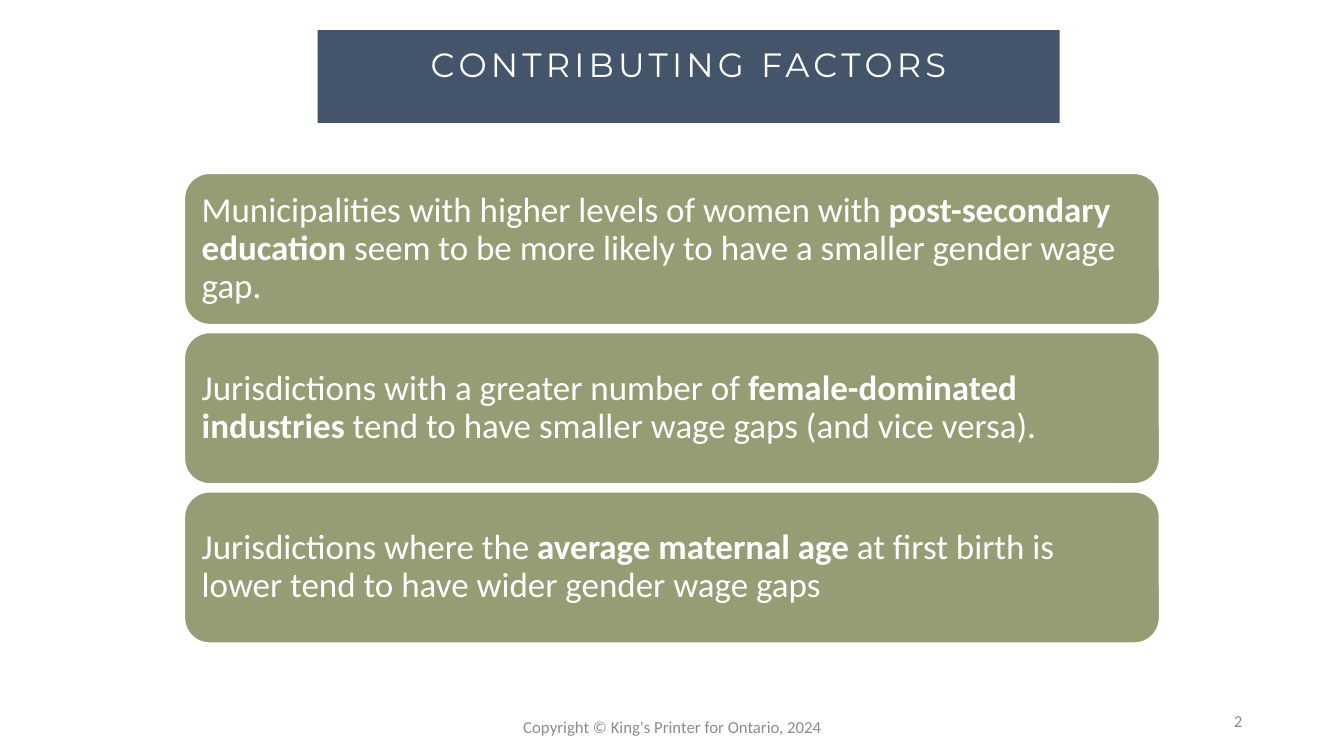
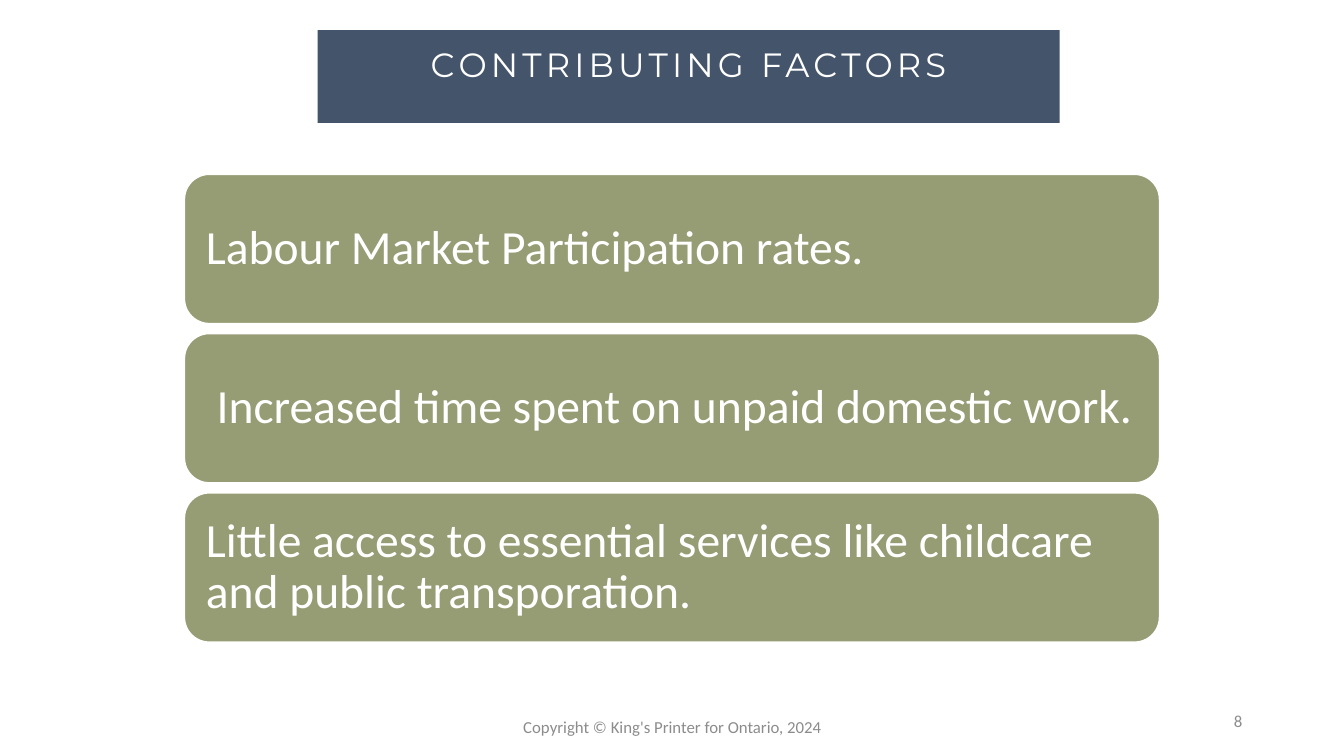
from pptx import Presentation
from pptx.dml.color import RGBColor
from pptx.enum.shapes import MSO_SHAPE
from pptx.enum.text import MSO_ANCHOR, PP_ALIGN
from pptx.util import Inches, Pt

NAVY, OLIVE, WHITE, GREY = "44546A", "969C74", "FFFFFF", "8C8C8C"
TITLE = "CONTRIBUTING FACTORS"
FOOTER = "Copyright © King's Printer for Ontario, 2024"

# Cards share one column; each is centred on its row.
CARD_LEFT, CARD_WIDTH = 1.83, 9.67
FIRST_ROW_CENTRE, ROW_PITCH = 2.47, 1.58

SLIDES = [
    dict(number="2", size=25, inset=0.1, height=1.5, cards=[
        "Municipalities with higher levels of women with **post-secondary education** "
        "seem to be more likely to have a smaller gender wage gap.",
        "Jurisdictions with a greater number of **female-dominated industries** "
        "tend to have smaller wage gaps (and vice versa).",
        "Jurisdictions where the **average maternal age** at first birth is lower "
        "tend to have wider gender wage gaps",
    ]),
    dict(number="8", size=34, inset=0.14, height=1.48, cards=[
        "Labour Market Participation rates.",
        " Increased time spent on unpaid domestic work.",
        "Little access to essential services like childcare and public transporation.",
    ]),
]


def color(value):
    return RGBColor.from_string(value)


def write(box, text, size, ink=WHITE, font="Calibri", align=PP_ALIGN.LEFT,
          anchor=MSO_ANCHOR.MIDDLE, insets=(0.1, 0.05), line_spacing=1.0, tracking=0):
    """Fill a box with one paragraph; text between ** marks is bold."""
    frame = box.text_frame
    frame.word_wrap = True
    frame.vertical_anchor = anchor
    frame.margin_left = frame.margin_right = Inches(insets[0])
    frame.margin_top = frame.margin_bottom = Inches(insets[1])
    para = frame.paragraphs[0]
    para.alignment = align
    para.line_spacing = line_spacing
    for index, part in enumerate(text.split("**")):
        span = para.add_run()
        span.text = part
        span.font.name = font
        span.font.size = Pt(size)
        span.font.bold = index % 2 == 1
        span.font.color.rgb = color(ink)
        if tracking:
            span.font._element.set("spc", str(tracking * 100))


deck = Presentation()
deck.slide_width, deck.slide_height = Inches(13.33), Inches(7.5)

for content in SLIDES:
    page = deck.slides.add_slide(deck.slide_layouts[6])

    band = page.shapes.add_shape(
        MSO_SHAPE.RECTANGLE, Inches(3.15), Inches(0.3), Inches(7.36), Inches(0.92))
    band.shadow.inherit = False
    band.fill.solid()
    band.fill.fore_color.rgb = color(NAVY)
    band.line.fill.background()
    write(band, TITLE, 24, font="Montserrat", align=PP_ALIGN.CENTER,
          anchor=MSO_ANCHOR.TOP, insets=(0.25, 0.14), tracking=3)

    for row, text in enumerate(content["cards"]):
        top = FIRST_ROW_CENTRE + row * ROW_PITCH - content["height"] / 2
        card = page.shapes.add_shape(
            MSO_SHAPE.ROUNDED_RECTANGLE, Inches(CARD_LEFT), Inches(top),
            Inches(CARD_WIDTH), Inches(content["height"]))
        card.shadow.inherit = False
        card.fill.solid()
        card.fill.fore_color.rgb = color(OLIVE)
        card.line.color.rgb = color(WHITE)
        card.line.width = Pt(1)
        write(card, text, content["size"], insets=(content["inset"],) * 2,
              line_spacing=0.9)

    for text, left, top, width, align in [
        (content["number"], 9.42, 6.95, 3, PP_ALIGN.RIGHT),
        (FOOTER, 4.42, 7.01, 4.5, PP_ALIGN.CENTER),
    ]:
        box = page.shapes.add_textbox(
            Inches(left), Inches(top), Inches(width), Inches(0.4))
        write(box, text, 12, ink=GREY, align=align)

deck.save("out.pptx")
